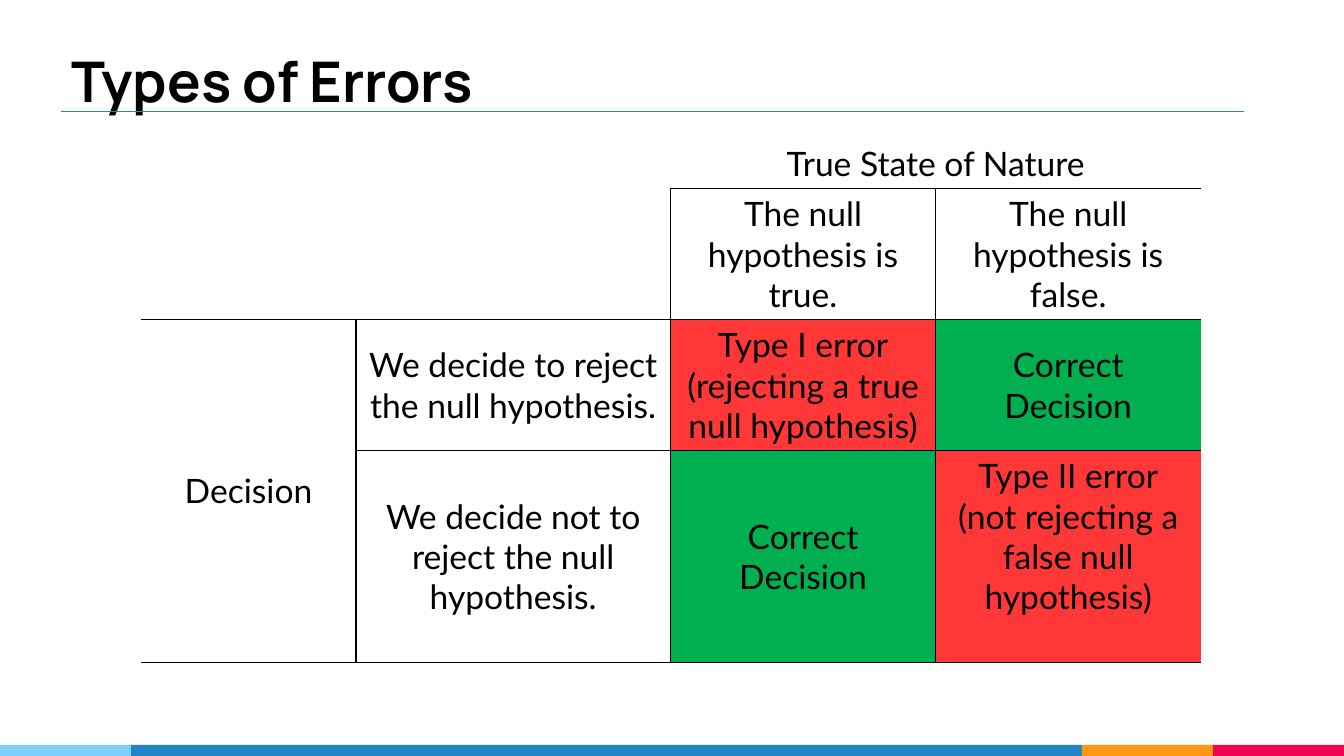
from pptx import Presentation
from pptx.dml.color import RGBColor as RGB
from pptx.enum.shapes import MSO_CONNECTOR as Link, MSO_SHAPE as Shape
from pptx.enum.text import MSO_ANCHOR as Anchor, MSO_AUTO_SIZE as Fit, PP_ALIGN as Align
from pptx.oxml import parse_xml
from pptx.oxml.ns import nsdecls
from pptx.util import Inches, Pt
from lxml.etree import SubElement


class Theme:
    ink, rule = "000000", "367EB9"
    bad, good = "FF3737", "00B050"
    sky, blue, gold, pink = "7ECEFD", "2185C5", "FF9715", "F20253"
    head, body = "Manrope", "Lato"
    big, mid = 40, 24


TITLE = "Types of Errors"
BANDS = [(0, Theme.sky), (1.3, Theme.blue), (10.73, Theme.gold), (12.03, Theme.pink)]
COLS = [2.13, 3.12, 2.63, 2.63]
ROWS = [0.5, 1.3, 1.3, 2.1]
SPANS = {(0, 0): (2, 2), (0, 2): (1, 2), (2, 0): (2, 1)}
CELLS = {
    (0, 2): "True State of Nature",
    (1, 2): "The null hypothesis is true.",
    (1, 3): "The null hypothesis is false.",
    (2, 0): "Decision",
    (2, 1): "We decide to reject the null hypothesis.",
    (2, 2): "Type I error\n(rejecting a true null hypothesis)",
    (2, 3): "Correct Decision",
    (3, 1): "We decide not to reject the null hypothesis.",
    (3, 2): "Correct Decision",
    (3, 3): "Type II error\n(not rejecting a false null hypothesis)",
}
FILLS = {(2, 2): Theme.bad, (2, 3): Theme.good, (3, 2): Theme.good, (3, 3): Theme.bad}
TOPS = {(3, 3)}
ACROSS = {1: 2, 2: 0, 3: 1, 4: 0}
DOWN = {1: 2, 2: 1, 3: 1}
PLAIN = "{2D5ABB26-0587-4C30-8999-92F81FD0307C}"
WIDE, TALL = 13.33, 7.5


def write(frame, text, font=Theme.body, size=Theme.mid, bold=False, align=Align.CENTER):
    frame.word_wrap = True
    frame.text = text
    for para in frame.paragraphs:
        para.alignment = align
        for run in para.runs:
            run.font.name = font
            run.font.size = Pt(size)
            run.font.bold = bold
            run.font.color.rgb = RGB.from_string(Theme.ink)


def edge(cell, side, shown):
    paint = f'<a:solidFill><a:srgbClr val="{Theme.ink}"/></a:solidFill>' if shown else "<a:noFill/>"
    line = f'<a:ln{side} {nsdecls("a")} w="{Pt(1)}">{paint}</a:ln{side}>'
    cell._tc.get_or_add_tcPr().append(parse_xml(line))


def add_bands(slide):
    ends = [left for left, _ in BANDS[1:]] + [WIDE]
    for (left, color), end in zip(BANDS, ends):
        band = slide.shapes.add_shape(Shape.RECTANGLE, Inches(left), Inches(7.39),
                                      Inches(end - left), Inches(0.11))
        band.shadow.inherit = False
        band.fill.solid()
        band.fill.fore_color.rgb = RGB.from_string(color)
        band.line.fill.background()


def add_title(slide):
    title = slide.shapes.title
    title.left, title.top = Inches(0.61), Inches(0.35)
    title.width, title.height = Inches(8.34), Inches(0.88)
    frame = title.text_frame
    frame.margin_left = frame.margin_right = Inches(0.1)
    frame.margin_top = frame.margin_bottom = Inches(0.1)
    frame.vertical_anchor = Anchor.BOTTOM
    frame.auto_size = Fit.NONE
    write(frame, TITLE, font=Theme.head, size=Theme.big, bold=True, align=Align.LEFT)
    rule = slide.shapes.add_connector(Link.STRAIGHT, Inches(0.61), Inches(1.11),
                                      Inches(12.34), Inches(1.11))
    rule.line.color.rgb = RGB.from_string(Theme.rule)
    rule.line.width = Pt(0.75)
    SubElement(rule._element.spPr, "{http://schemas.openxmlformats.org/drawingml/2006/main}effectLst")


def add_grid(slide):
    frame = slide.shapes.add_table(len(ROWS), len(COLS), Inches(1.4), Inches(1.37),
                                   Inches(sum(COLS)), Inches(sum(ROWS)))
    table = frame.table
    table.first_row = table.horz_banding = False
    table._tbl.tblPr[0].text = PLAIN
    for col, width in zip(table.columns, COLS):
        col.width = Inches(width)
    for row, height in zip(table.rows, ROWS):
        row.height = Inches(height)
    for (r, c), (high, wide) in SPANS.items():
        table.cell(r, c).merge(table.cell(r + high - 1, c + wide - 1))
    for r in range(len(ROWS)):
        for c in range(len(COLS)):
            cell, spot = table.cell(r, c), (r, c)
            high, wide = SPANS.get(spot, (1, 1))
            edge(cell, "L", r >= DOWN.get(c, 9))
            edge(cell, "R", r >= DOWN.get(c + wide, 9))
            edge(cell, "T", c >= ACROSS.get(r, 9))
            edge(cell, "B", c >= ACROSS.get(r + high, 9))
            if spot in FILLS:
                cell.fill.solid()
                cell.fill.fore_color.rgb = RGB.from_string(FILLS[spot])
            else:
                cell.fill.background()
            cell.vertical_anchor = Anchor.TOP if spot in TOPS else Anchor.MIDDLE
            if spot in CELLS:
                write(cell.text_frame, CELLS[spot])


def main():
    deck = Presentation()
    deck.slide_width, deck.slide_height = Inches(WIDE), Inches(TALL)
    slide = deck.slides.add_slide(deck.slide_layouts[5])
    add_bands(slide)
    add_title(slide)
    add_grid(slide)
    deck.save("out.pptx")


if __name__ == "__main__":
    main()
